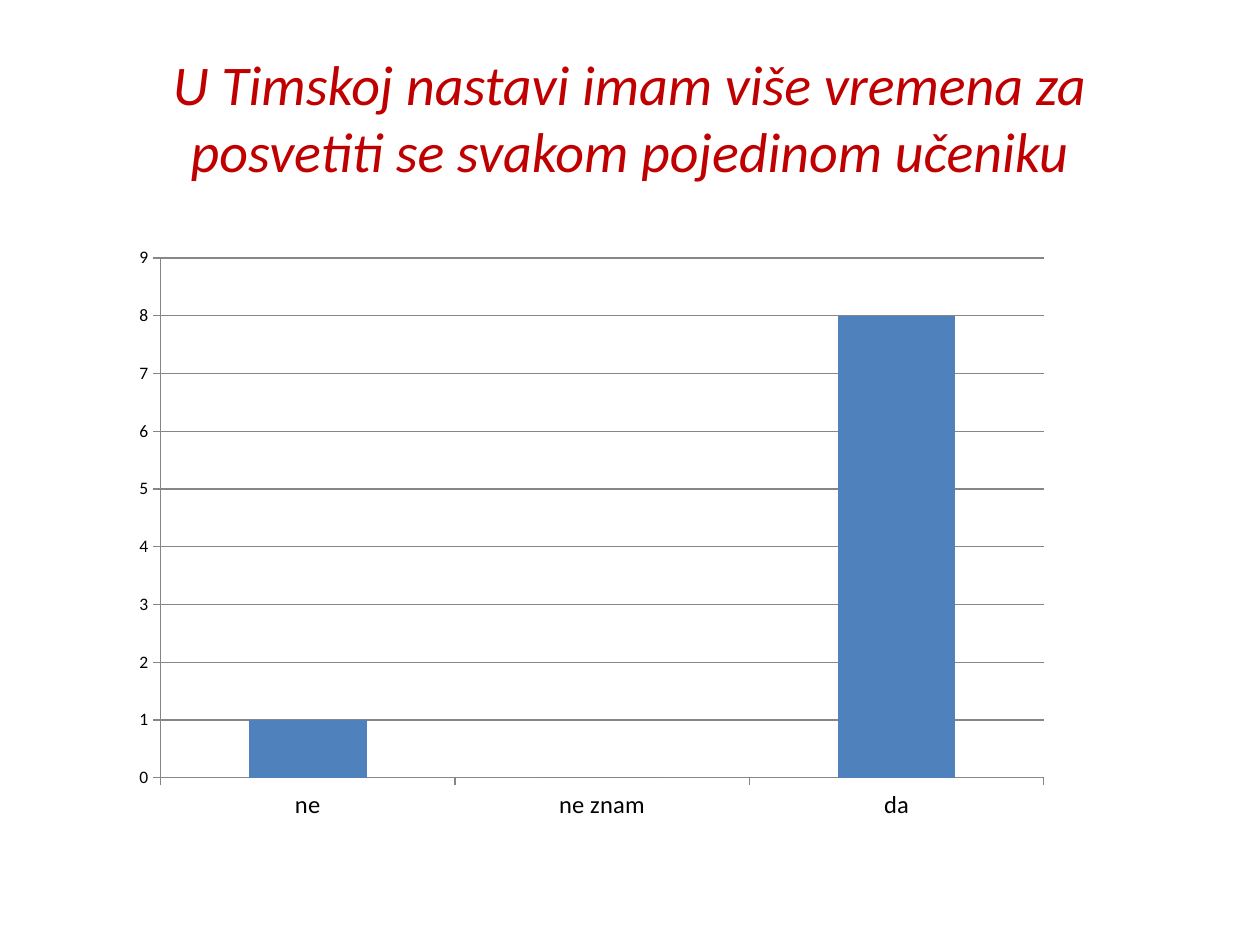
from lxml import etree
from pptx import Presentation
from pptx import util as u
from pptx.chart.data import CategoryChartData
from pptx.dml.color import RGBColor
from pptx.enum import chart as ch, text
from pptx.oxml.ns import qn

# Content
QUESTION = "U Timskoj nastavi imam više vremena za posvetiti se svakom pojedinom učeniku"
ANSWERS = {"ne": 1, "ne znam": 0, "da": 8}

# Places in px: left, top, width, height
SLIDE_SIZE = (1260, 945)
QUESTION_BOX = (63, 38, 1134, 157)
CHART_BOX = (63, 220, 1134, 624)
PLOT_AREA = {"x": 0.086, "y": 0.061, "w": 0.779, "h": 0.833}  # shares of the chart

FONT = "Calibri"
RED = RGBColor(0xC0, 0x00, 0x00)
BLUE = RGBColor(0x4F, 0x81, 0xBD)
GRAY = RGBColor(0x86, 0x86, 0x86)
BLACK = RGBColor(0x00, 0x00, 0x00)


def px(lengths):
    return [u.Inches(length / 126) for length in lengths]


def set_font(font, size, color):
    font.name, font.size, font.color.rgb = FONT, u.Pt(size), color


def place_plot(chart):
    """Fix the inner plot area at the shares in PLOT_AREA."""
    plot_area = chart.plots[0]._element.getparent()
    for old in plot_area.findall(qn("c:layout")):
        plot_area.remove(old)
    layout = etree.Element(qn("c:layout"))
    plot_area.insert(0, layout)
    manual = etree.SubElement(layout, qn("c:manualLayout"))
    settings = {"layoutTarget": "inner", "xMode": "edge", "yMode": "edge", **PLOT_AREA}
    for tag, value in settings.items():
        etree.SubElement(manual, qn(f"c:{tag}")).set("val", str(value))


prs = Presentation()
prs.slide_width, prs.slide_height = px(SLIDE_SIZE)
slide = prs.slides.add_slide(prs.slide_layouts[6])

# Question
question = slide.shapes.add_textbox(*px(QUESTION_BOX)).text_frame
question.word_wrap = True
question.vertical_anchor = text.MSO_ANCHOR.MIDDLE
question.text = QUESTION
heading = question.paragraphs[0]
heading.alignment = text.PP_ALIGN.CENTER
set_font(heading.runs[0].font, 32, RED)
heading.runs[0].font.italic = True

# Answer counts
counts = CategoryChartData()
counts.categories = list(ANSWERS)
counts.add_series("Series 1", list(ANSWERS.values()))
chart = slide.shapes.add_chart(
    ch.XL_CHART_TYPE.COLUMN_CLUSTERED, *px(CHART_BOX), counts).chart
chart.has_title = chart.has_legend = False
set_font(chart.font, 10, BLACK)
place_plot(chart)

columns = chart.plots[0]
columns.vary_by_categories = False
columns.gap_width = 150
fill = columns.series[0].format.fill
fill.solid()
fill.fore_color.rgb = BLUE

# Axes
answer_axis, count_axis = chart.category_axis, chart.value_axis
count_axis.minimum_scale, count_axis.maximum_scale, count_axis.major_unit = 0, 9, 1
count_axis.has_major_gridlines = True
for axis in (answer_axis, count_axis):
    axis.major_tick_mark = ch.XL_TICK_MARK.OUTSIDE
    axis.minor_tick_mark = ch.XL_TICK_MARK.NONE
for lined in (answer_axis, count_axis, count_axis.major_gridlines):
    lined.format.line.color.rgb = GRAY
    lined.format.line.width = u.Pt(0.75)
set_font(answer_axis.tick_labels.font, 14, BLACK)

prs.save("out.pptx")
